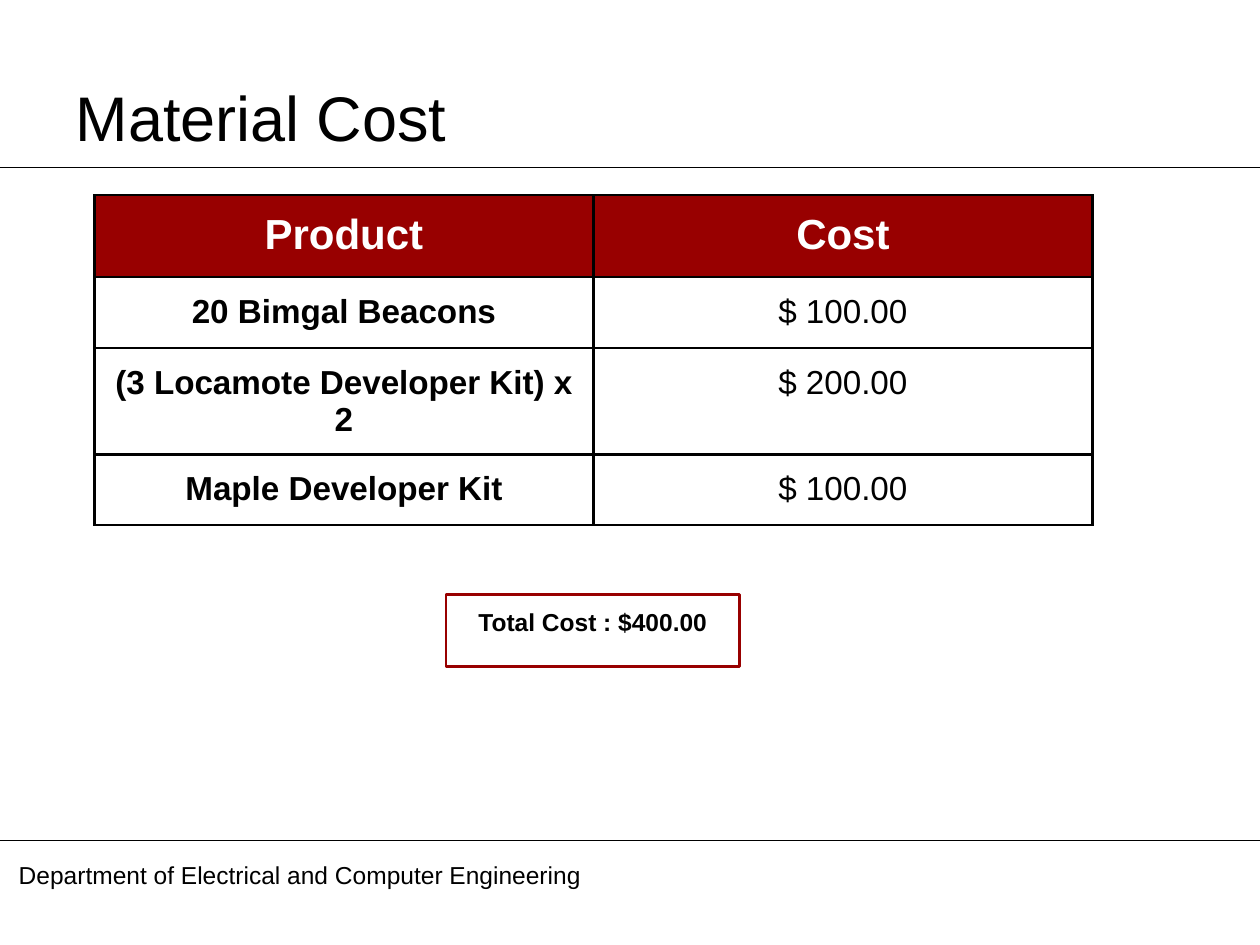
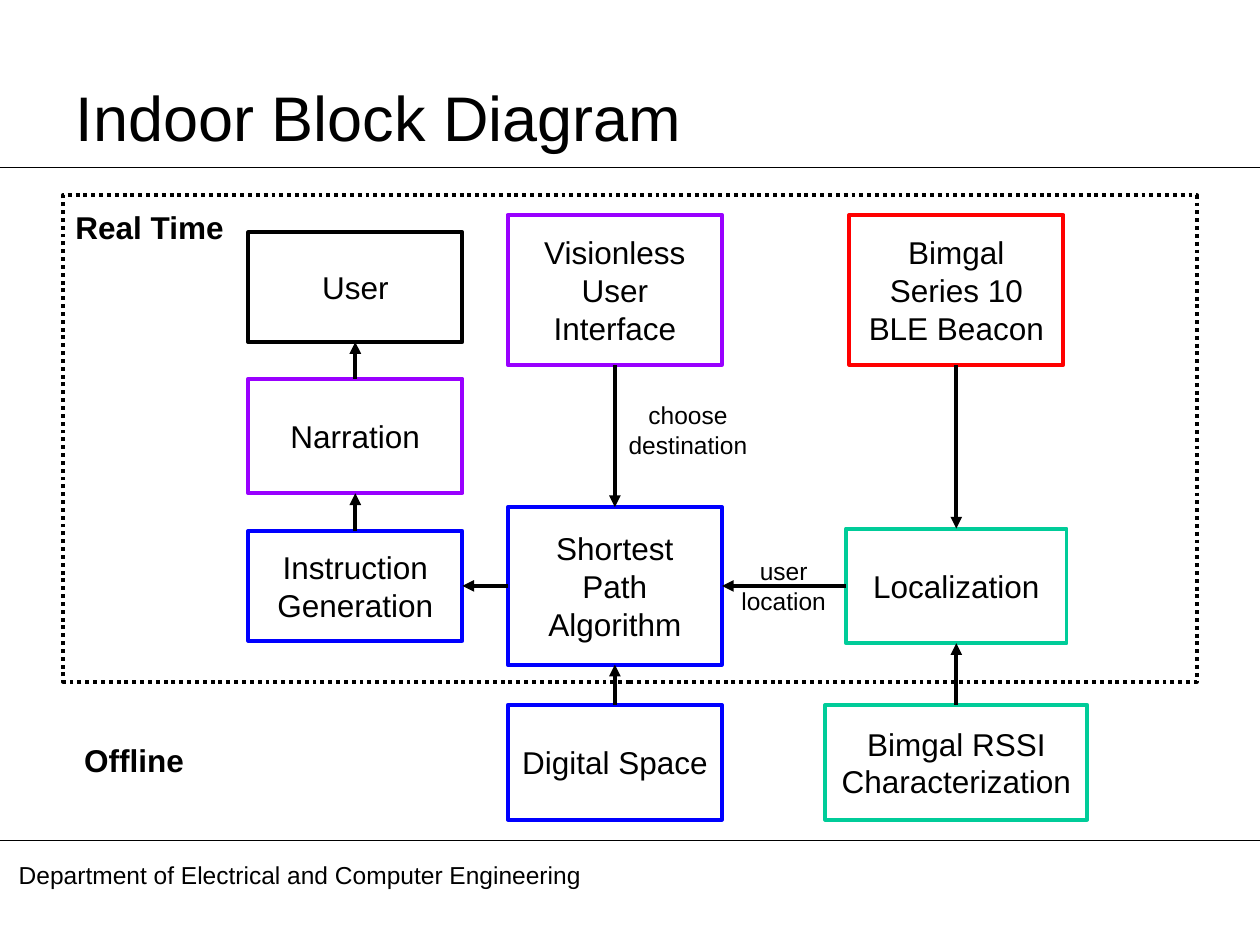
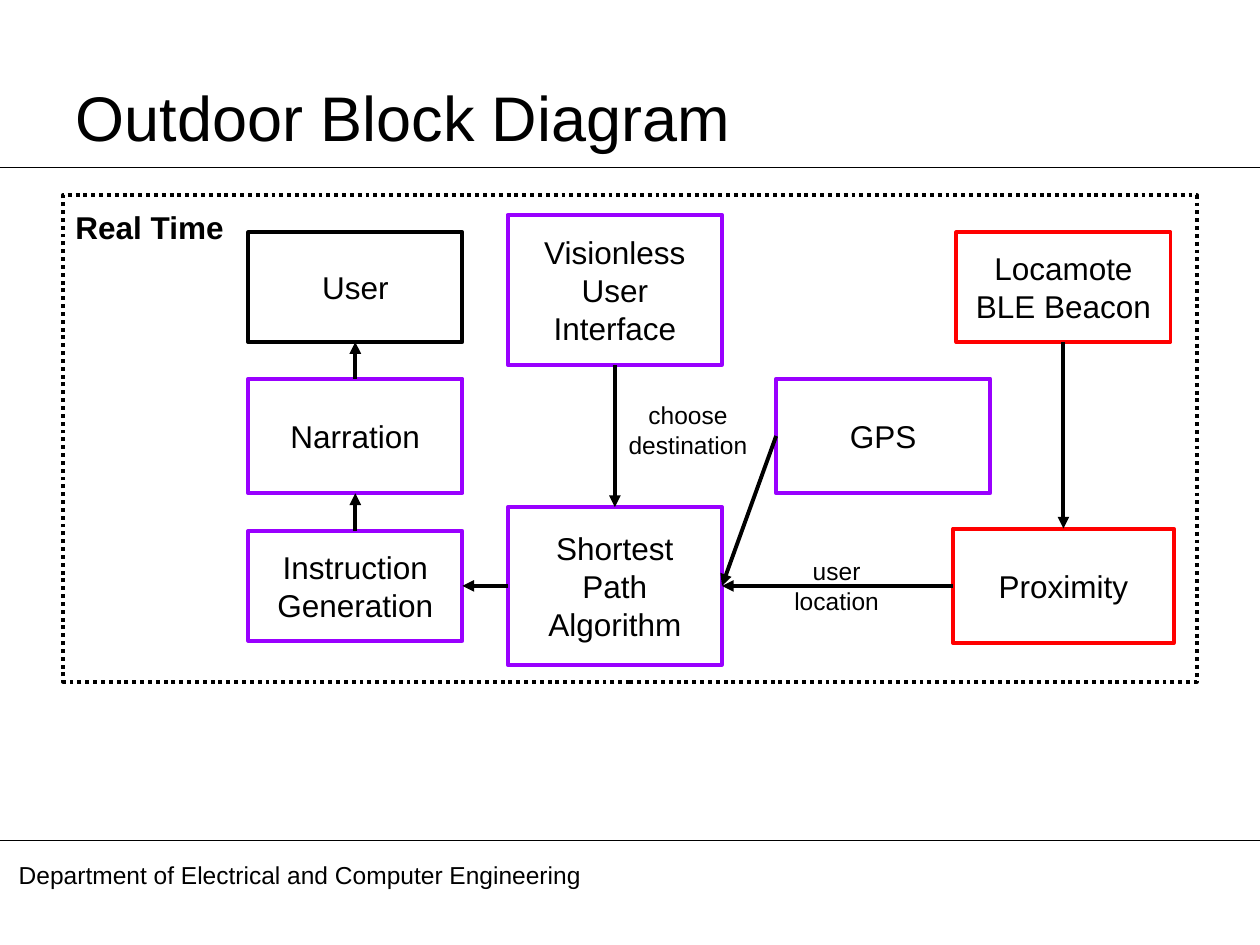
from lxml import etree
from pptx import Presentation
from pptx.dml.color import RGBColor
from pptx.enum.dml import MSO_LINE
from pptx.enum.shapes import MSO_CONNECTOR, MSO_SHAPE
from pptx.enum.text import MSO_ANCHOR, MSO_AUTO_SIZE, PP_ALIGN
from pptx.oxml.ns import qn
from pptx.util import Inches, Pt

BLACK = RGBColor(0x00, 0x00, 0x00)
WHITE = RGBColor(0xFF, 0xFF, 0xFF)
MAROON = RGBColor(0x98, 0x00, 0x00)
BLUE = RGBColor(0x00, 0x00, 0xFF)
PURPLE = RGBColor(0x99, 0x00, 0xFF)
RED = RGBColor(0xFF, 0x00, 0x00)
GREEN = RGBColor(0x00, 0xCC, 0x99)
FONT = "Arial"
INSET = Inches(0.1)
TOP, LEFT, BOTTOM, RIGHT = range(4)  # connection sites of a rectangle

# Centre lines of the diagram grid, in inches
COLS = {"guide": 2.82, "path": 4.88, "mid": 7.01, "indoor": 7.59, "outdoor": 8.44}
ROWS = {"top": 2.28, "tall": 2.3, "mid": 3.46, "base": 4.65, "off": 6.05}
WIDE = 1.7
TITLES = ["Material Cost", "Indoor Block Diagram", "Outdoor Block Diagram"]


def style(frame, text, size, bold=False, align=PP_ALIGN.CENTER, anchor=MSO_ANCHOR.MIDDLE):
    frame.text = text
    frame.word_wrap = True
    frame.auto_size = MSO_AUTO_SIZE.NONE
    frame.vertical_anchor = anchor
    frame.margin_left = frame.margin_right = INSET
    frame.margin_top = frame.margin_bottom = INSET
    for para in frame.paragraphs:
        para.alignment = align
        para.font.name = FONT
        para.font.size = Pt(size)
        para.font.bold = bold
        para.font.color.rgb = BLACK


def add_line(slide, y, width):
    """Add a black full-width line; arrows are then glued to their boxes."""
    line = slide.shapes.add_connector(
        MSO_CONNECTOR.STRAIGHT, 0, Inches(y), deck.slide_width, Inches(y))
    line.line.color.rgb = BLACK
    line.line.width = Pt(width)
    etree.SubElement(line.element.spPr, qn("a:effectLst"))
    return line


deck = Presentation()
deck.slide_width, deck.slide_height = Inches(10), Inches(7.5)

# Shared title, rules and footer
slides = []
for text in TITLES:
    slide = deck.slides.add_slide(deck.slide_layouts[5])
    title = slide.shapes.title
    title.left, title.top = Inches(0.5), Inches(0.3)
    title.width, title.height = Inches(9), Inches(1.25)
    style(title.text_frame, text, 36, align=PP_ALIGN.LEFT)
    for y in (1.33, 6.67):
        add_line(slide, y, 1)
    foot = slide.shapes.add_textbox(
        Inches(0.05), Inches(6.71), Inches(6.09), Inches(0.46))
    style(foot.text_frame, "Department of Electrical and Computer Engineering",
          14, align=PP_ALIGN.LEFT)
    slides.append(slide)
cost, indoor, outdoor = slides

# Cost table
items = [
    ("Product", "Cost"),
    ("20 Bimgal Beacons", "$ 100.00"),
    ("(3 Locamote Developer Kit) x 2", "$ 200.00"),
    ("Maple Developer Kit", "$ 100.00"),
]
table = cost.shapes.add_table(
    len(items), 2, Inches(0.75), Inches(1.55), Inches(7.92), Inches(2.33)).table
for r, item in enumerate(items):
    head = r == 0
    table.rows[r].height = Inches(0.65 if head else 0.56)
    for c, text in enumerate(item):
        cell = table.cell(r, c)
        cell.text = text
        cell.margin_left = cell.margin_right = INSET
        cell.margin_top = cell.margin_bottom = Inches(0.13)
        para = cell.text_frame.paragraphs[0]
        para.alignment = PP_ALIGN.CENTER
        para.font.name = FONT
        para.font.size = Pt(24 if head else 19)
        para.font.bold = head or c == 0
        para.font.color.rgb = WHITE if head else BLACK
        props = cell._tc.get_or_add_tcPr()
        for side in ("lnL", "lnR", "lnT", "lnB"):
            edge = etree.SubElement(props, qn(f"a:{side}"), w=str(Pt(1.5)))
            fill = etree.SubElement(edge, qn("a:solidFill"))
            etree.SubElement(fill, qn("a:srgbClr"), val=str(BLACK))
        if head:
            cell.fill.solid()
            cell.fill.fore_color.rgb = MAROON
        else:
            cell.fill.background()

total = cost.shapes.add_shape(
    MSO_SHAPE.RECTANGLE, Inches(3.54), Inches(4.72), Inches(2.33), Inches(0.57))
total.shadow.inherit = False
total.fill.background()
total.line.color.rgb = MAROON
total.line.width = Pt(1.5)
style(total.text_frame, "Total Cost : $400.00", 14, bold=True, anchor=MSO_ANCHOR.TOP)

# Block diagrams: boxes are name, text, colour, column, row, width, height
shared = [
    ("user", "User", BLACK, "guide", "top", WIDE, 0.87),
    ("voice", "Narration", PURPLE, "guide", "mid", WIDE, 0.91),
    ("face", "Visionless User Interface", PURPLE, "path", "tall", WIDE, 1.19),
]
links = [
    ("voice", TOP, "user", BOTTOM),
    ("guide", TOP, "voice", BOTTOM),
    ("path", LEFT, "guide", RIGHT),
    ("face", BOTTOM, "path", TOP),
    ("place", LEFT, "path", RIGHT),
    ("beacon", BOTTOM, "place", TOP),
]
diagrams = [
    (indoor, BLUE, 6.22, [
        ("beacon", "Bimgal Series 10 BLE Beacon", RED, "indoor", "tall", WIDE, 1.19),
        ("place", "Localization", GREEN, "indoor", "base", 1.75, 0.91),
        ("space", "Digital Space", BLUE, "path", "off", WIDE, 0.91),
        ("signal", "Bimgal RSSI Characterization", GREEN, "indoor", "off", 2.08, 0.91),
    ], [
        ("space", TOP, "path", BOTTOM),
        ("signal", TOP, "place", BOTTOM),
    ], [("Offline", 0.57, 5.78)]),
    (outdoor, PURPLE, 6.64, [
        ("beacon", "Locamote BLE Beacon", RED, "outdoor", "top", WIDE, 0.87),
        ("place", "Proximity", RED, "outdoor", "base", 1.75, 0.91),
        ("gps", "GPS", PURPLE, "mid", "mid", WIDE, 0.91),
    ], [("gps", LEFT, "path", RIGHT)], []),
]
for slide, tint, spot, extra, more, zones in diagrams:
    zone = slide.shapes.add_shape(
        MSO_SHAPE.RECTANGLE, Inches(0.5), Inches(1.55), Inches(9), Inches(3.86))
    zone.shadow.inherit = False
    zone.fill.background()
    zone.line.color.rgb = BLACK
    zone.line.width = Pt(2.25)
    zone.line.dash_style = MSO_LINE.ROUND_DOT

    core = [
        ("guide", "Instruction Generation", tint, "guide", "base", WIDE, 0.87),
        ("path", "Shortest Path Algorithm", tint, "path", "base", WIDE, 1.25),
    ]
    boxes = {}
    for name, text, color, col, row, w, h in shared + core + extra:
        box = slide.shapes.add_shape(
            MSO_SHAPE.RECTANGLE, Inches(COLS[col] - w / 2), Inches(ROWS[row] - h / 2),
            Inches(w), Inches(h))
        box.shadow.inherit = False
        box.fill.background()
        box.line.color.rgb = color
        box.line.width = Pt(2.25)
        style(box.text_frame, text, 18)
        boxes[name] = box

    for start, out, end, into in links + more:
        arrow = add_line(slide, 0, 2.25)
        arrow.begin_connect(boxes[start], out)
        arrow.end_connect(boxes[end], into)
        etree.SubElement(arrow.line._get_or_add_ln(), qn("a:tailEnd"), type="triangle")

    for text, x, y in [("Real Time", 0.5, 1.55)] + zones:
        label = slide.shapes.add_textbox(Inches(x), Inches(y), Inches(1.56), Inches(0.38))
        style(label.text_frame, text, 18, True, PP_ALIGN.LEFT, MSO_ANCHOR.TOP)
    for text, x, y, w in [("choose\ndestination", 5.46, 3.41, 1.19),
                          ("user location", spot, ROWS["base"], 1)]:
        label = slide.shapes.add_textbox(
            Inches(x - w / 2), Inches(y - 0.23), Inches(w), Inches(0.46))
        style(label.text_frame, text, 14)

deck.save("out.pptx")
